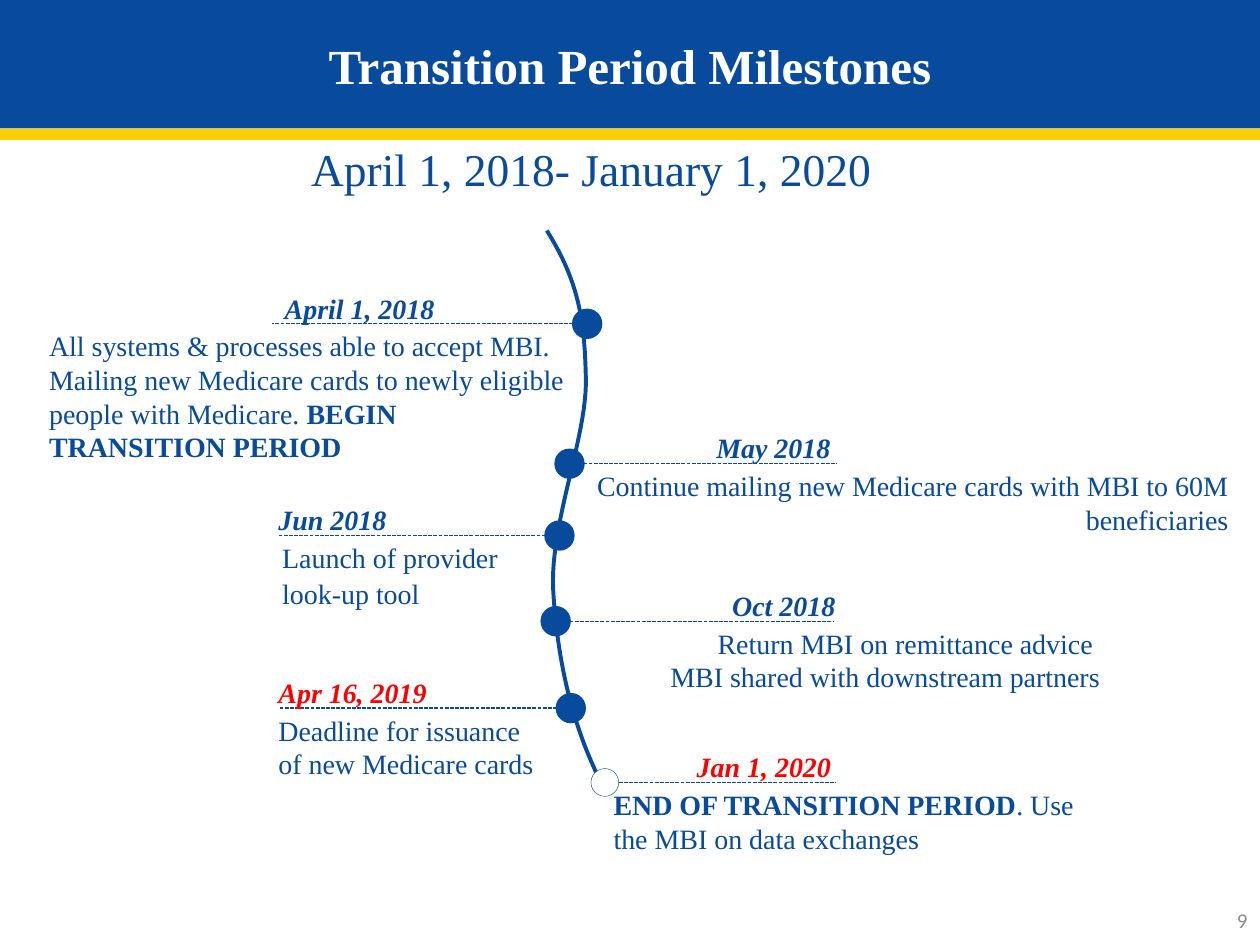
from lxml import etree
from pptx import Presentation
from pptx import util as u
from pptx.dml.color import RGBColor
from pptx.enum import dml, shapes, text
from pptx.oxml.ns import qn

PX = 9144  # 100 px to the inch
BLUE, YELLOW, RED, WHITE, GREY = "084A9C", "FFD004", "FF0000", "FFFFFF", "8C8C8C"
SERIF = "Times New Roman"
LEFT, CENTER, RIGHT = text.PP_ALIGN.LEFT, text.PP_ALIGN.CENTER, text.PP_ALIGN.RIGHT
RADIUS = 11

# dot centre, dot fill, rule end, date (text, colour, left, width, align),
# body (left, width, height, align, space after, paragraphs of (text, bold) runs)
MILESTONES = [
    ((466, 257), BLUE, 216, ("April 1, 2018", BLUE, 226, 233, LEFT),
     (39, 413, 112, LEFT, 0,
      [[("All systems & processes able to accept MBI. Mailing new Medicare cards "
         "to newly eligible people with Medicare. ", False),
        ("BEGIN TRANSITION PERIOD", True)]])),
    ((452, 368), BLUE, 664, ("May 2018", BLUE, 546, 113, RIGHT),
     (471, 504, 58, RIGHT, 0,
      [[("Continue mailing new Medicare cards with MBI to 60M beneficiaries", False)]])),
    ((444, 425), BLUE, 221, ("Jun 2018", BLUE, 221, 118, LEFT),
     (224, 224, 90, LEFT, 1.5,
      [[("Launch of provider", False)], [("look-up tool", False)]])),
    ((441, 493), BLUE, 662, ("Oct 2018", BLUE, 577, 86, RIGHT),
     (468, 405, 58, RIGHT, 0,
      [[("Return MBI on remittance advice ", False)],
       [("MBI shared with downstream partners", False)]])),
    ((453, 562), BLUE, 221, ("Apr 16, 2019", RED, 221, 149, LEFT),
     (221, 213, 85, LEFT, 0,
      [[("Deadline for issuance of new Medicare cards", False)]])),
    ((480, 621), WHITE, 663, ("Jan 1, 2020", RED, 553, 113, LEFT),
     (487, 387, 58, LEFT, 0,
      [[("END OF TRANSITION PERIOD", True),
        (". Use the MBI on data exchanges", False)]])),
]

CURVE = [
    [(434, 183), (459, 223), (464, 253), (465, 300)],
    [(465, 300), (466, 347), (437, 413), (439, 467)],
    [(439, 467), (442, 521), (453, 574), (478, 623)],
]


def px(*values):
    return [round(v * PX) for v in values]


def rgb(color):
    return RGBColor.from_string(color)


def style(run, size, color, bold=False, italic=False, font=SERIF):
    f = run.font
    f.name, f.size, f.bold, f.italic = font, u.Pt(size), bold, italic
    f.color.rgb = rgb(color)


def add_text(s, box, paragraphs, size=16, color=BLUE, align=LEFT, italic=False,
             insets=(0, 0, 0, 0), after=0, wrap=True):
    """Paragraphs are lists of (text, bold) runs."""
    tf = s.shapes.add_textbox(*px(*box)).text_frame
    tf.word_wrap = wrap
    tf.margin_left, tf.margin_top, tf.margin_right, tf.margin_bottom = px(*insets)
    for i, runs in enumerate(paragraphs):
        p = tf.add_paragraph() if i else tf.paragraphs[0]
        p.alignment, p.space_after = align, u.Pt(after)
        for words, bold in runs:
            r = p.add_run()
            r.text = words
            style(r, size, color, bold, italic)
    return tf


def add_filled(s, kind, box, fill, line=None, width=0):
    sp = s.shapes.add_shape(kind, *px(*box))
    sp.shadow.inherit = False
    sp.fill.solid()
    sp.fill.fore_color.rgb = rgb(fill)
    if line:
        sp.line.color.rgb = rgb(line)
        sp.line.width = u.Pt(width)
    else:
        sp.line.fill.background()


def add_rule(s, x1, x2, y):
    line = s.shapes.add_connector(shapes.MSO_CONNECTOR.STRAIGHT, *px(x1, y, x2, y))
    line.line.color.rgb = rgb(BLUE)
    line.line.width = u.Pt(0.75)
    line.line.dash_style = dml.MSO_LINE.SQUARE_DOT
    etree.SubElement(line.element.spPr, qn("a:effectLst"))


def header(s, x, y, w, h):
    band = shapes.MSO_SHAPE.RECTANGLE
    add_filled(s, band, (x, y, w, h - 9), BLUE)
    add_filled(s, band, (x, y + h - 9, w, 9), YELLOW)
    title = s.shapes.title
    title.element.getparent().append(title.element)  # in front of the bands
    title.left, title.top, title.width, title.height = px(x, y + 28, w, 47)
    tf = title.text_frame
    tf.margin_left = tf.margin_top = tf.margin_right = tf.margin_bottom = 0
    tf.vertical_anchor = text.MSO_ANCHOR.MIDDLE
    p = tf.paragraphs[0]
    p.alignment = CENTER
    r = p.add_run()
    r.text = "Transition Period Milestones"
    style(r, 28, WHITE, bold=True)


def bezier(a, b, c, d, steps=24):
    for i in range(1, steps + 1):
        t = i / steps
        k = 1 - t
        yield tuple(k**3 * a[n] + 3 * k * k * t * b[n] + 3 * k * t * t * c[n] + t**3 * d[n]
                    for n in (0, 1))


def timeline_curve(s):
    points = [px(*pt) for segment in CURVE for pt in bezier(*segment)]
    fb = s.shapes.build_freeform(*px(*CURVE[0][0]))
    fb.add_line_segments(points, close=False)
    sp = fb.convert_to_shape()
    sp.shadow.inherit = False
    sp.fill.background()
    sp.line.color.rgb = rgb(BLUE)
    sp.line.width = u.Pt(2.25)


def milestone(s, centre, fill, rule_end, date, body):
    """Dot, dashed rule level with it, date above the rule and body below."""
    x, y = centre
    edge = x + RADIUS if rule_end > x else x - RADIUS
    add_rule(s, edge, rule_end, y)
    add_filled(s, shapes.MSO_SHAPE.OVAL, (x - RADIUS, y - RADIUS, 2 * RADIUS, 2 * RADIUS),
               fill, BLUE, 0.25 if fill == WHITE else 1.5)
    words, color, left, width, align = date
    add_text(s, (left, y - 26, width, 31), [[(words, True)]], color=color, align=align,
             italic=True, insets=(0, 0, 0, 4))
    left, width, height, align, after, paragraphs = body
    add_text(s, (left, y, width, height), paragraphs, align=align, after=after,
             insets=(0, 4, 0, 0))


def slide_number(s, box, number):
    tf = add_text(s, box, [[(number, False)]], align=RIGHT, insets=(10, 5, 10, 5))
    tf.vertical_anchor = text.MSO_ANCHOR.MIDDLE
    r = tf.paragraphs[0].runs[0]
    style(r, 12, GREY, font="Calibri")


def main():
    prs = Presentation()
    prs.slide_width, prs.slide_height = px(1000, 750)
    s = prs.slides.add_slide(prs.slide_layouts[5])
    header(s, 0, 0, 1000, 111)
    add_text(s, (237, 107, 469, 54), [[("April 1, 2018- January 1, 2020", False)]],
             size=26, insets=(10, 5, 10, 5), wrap=False)
    timeline_curve(s)
    for item in MILESTONES:
        milestone(s, *item)
    slide_number(s, (767, 710, 233, 40), "9")
    prs.save("out.pptx")


if __name__ == "__main__":
    main()
